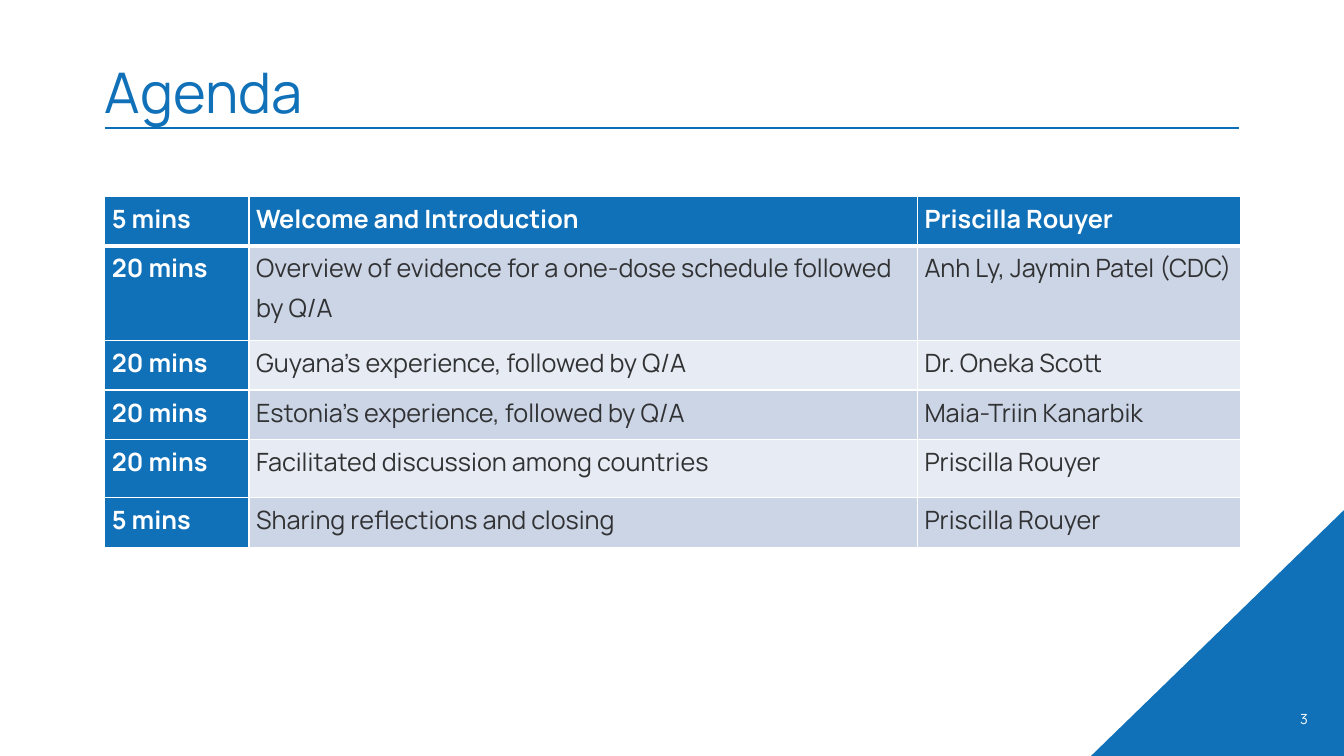
from lxml.etree import SubElement
from pptx import Presentation
from pptx.dml.color import RGBColor
from pptx.enum.shapes import MSO_CONNECTOR, MSO_SHAPE
from pptx.enum.text import MSO_ANCHOR, PP_ALIGN
from pptx.oxml.ns import qn
from pptx.util import Inches, Pt

FONT = "Manrope"
BLUE = RGBColor(0x10, 0x70, 0xB8)
RULE_BLUE = RGBColor(0x0C, 0x6E, 0xB8)
WHITE = RGBColor(0xFF, 0xFF, 0xFF)
DARK = RGBColor(0x31, 0x32, 0x33)
BAND_DARK = RGBColor(0xCC, 0xD5, 0xE6)
BAND_LIGHT = RGBColor(0xE7, 0xEB, 0xF3)

LEFT = 1.04
COLUMN_WIDTHS = [1.43, 6.63, 3.2]
ROW_HEIGHTS = [0.49, 0.94, 0.49, 0.49, 0.58, 0.49]
AGENDA = [
    ("5 mins", "Welcome and Introduction", "Priscilla Rouyer"),
    ("20 mins", "Overview of evidence for a one-dose schedule followed by Q/A",
     "Anh Ly, Jaymin Patel (CDC)"),
    ("20 mins", "Guyana’s experience, followed by Q/A", "Dr. Oneka Scott"),
    ("20 mins", "Estonia’s experience, followed by Q/A", "Maia-Triin Kanarbik"),
    ("20 mins", "Facilitated discussion among countries", "Priscilla Rouyer"),
    ("5 mins", "Sharing reflections and closing", "Priscilla Rouyer"),
]


def set_font(paragraph, size, color, bold=False):
    font = paragraph.font
    font.name = FONT
    font.size = Pt(size)
    font.bold = bold
    font.color.rgb = color


def add_text(slide, text, box, size, color, anchor, align, margins):
    shape = slide.shapes.add_textbox(*map(Inches, box))
    frame = shape.text_frame
    frame.word_wrap = True
    frame.vertical_anchor = anchor
    (frame.margin_left, frame.margin_top,
     frame.margin_right, frame.margin_bottom) = map(Inches, margins)
    paragraph = frame.paragraphs[0]
    paragraph.text = text
    paragraph.alignment = align
    set_font(paragraph, size, color)


def add_corner(slide):
    shape = slide.shapes.add_shape(
        MSO_SHAPE.ISOSCELES_TRIANGLE,
        Inches(10.82), Inches(5.05), Inches(2.52), Inches(2.45))
    shape.adjustments[0] = 1
    shape.shadow.inherit = False
    shape.fill.solid()
    shape.fill.fore_color.rgb = BLUE
    shape.line.fill.background()


def add_rule(slide):
    line = slide.shapes.add_connector(
        MSO_CONNECTOR.STRAIGHT,
        Inches(LEFT), Inches(1.27), Inches(12.29), Inches(1.27))
    line.line.color.rgb = RULE_BLUE
    line.line.width = Pt(1)
    SubElement(line._element.spPr, qn("a:effectLst"))


def set_borders(cell, top, bottom):
    properties = cell._tc.get_or_add_tcPr()
    for side, width in (("L", 1), ("R", 1), ("T", top), ("B", bottom)):
        border = SubElement(properties, qn(f"a:ln{side}"), w=str(Pt(width)))
        fill = SubElement(border, qn("a:solidFill"))
        SubElement(fill, qn("a:srgbClr"), val=str(WHITE))


def fill_cell(cell, text, row, column):
    heading = row == 0 or column == 0
    set_borders(cell, top=3 if row == 1 else 1, bottom=3 if row == 0 else 1)
    cell.fill.solid()
    band = BAND_DARK if row % 2 else BAND_LIGHT
    cell.fill.fore_color.rgb = BLUE if heading else band
    cell.margin_left = cell.margin_right = Inches(0.07)
    cell.margin_top = cell.margin_bottom = 0
    paragraph = cell.text_frame.paragraphs[0]
    paragraph.text = text
    paragraph.line_spacing = 1.15
    paragraph.space_after = Pt(10)
    set_font(paragraph, 18, WHITE if heading else DARK, heading)


def add_agenda(slide):
    table = slide.shapes.add_table(
        len(AGENDA), len(COLUMN_WIDTHS), Inches(LEFT), Inches(1.95),
        Inches(sum(COLUMN_WIDTHS)), Inches(sum(ROW_HEIGHTS))).table
    table.first_col = True
    for column, width in zip(table.columns, COLUMN_WIDTHS):
        column.width = Inches(width)
    for row, height in zip(table.rows, ROW_HEIGHTS):
        row.height = Inches(height)
    for row, texts in enumerate(AGENDA):
        for column, text in enumerate(texts):
            fill_cell(table.cell(row, column), text, row, column)


def main():
    presentation = Presentation()
    presentation.slide_width = Inches(13.33)
    presentation.slide_height = Inches(7.5)
    slide = presentation.slides.add_slide(presentation.slide_layouts[6])

    # Corner decoration and title rule
    add_corner(slide)
    add_rule(slide)

    # Slide number and title
    add_text(slide, "3", (9.96, 6.93, 3.11, 0.4), 10, WHITE,
             MSO_ANCHOR.MIDDLE, PP_ALIGN.RIGHT, (0.1, 0.05, 0.1, 0.05))
    add_text(slide, "Agenda", (LEFT, 0.27, 11.26, 0.97), 40, BLUE,
             MSO_ANCHOR.BOTTOM, PP_ALIGN.LEFT, (0, 0.05, 0.1, 0))

    # Agenda table
    add_agenda(slide)

    presentation.save("out.pptx")


if __name__ == "__main__":
    main()
